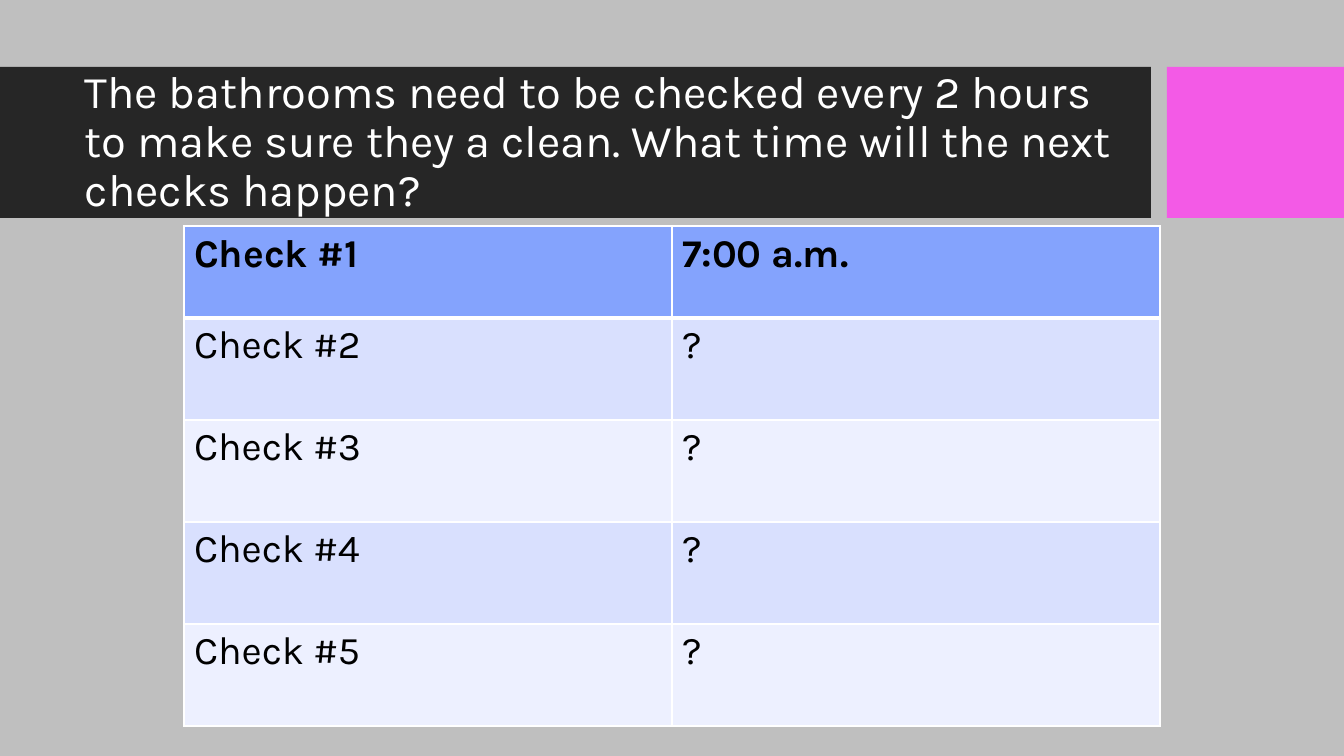
"""Build a slide with a table of bathroom check times."""
from lxml.etree import SubElement
from pptx import Presentation
from pptx.dml.color import RGBColor
from pptx.enum.shapes import MSO_SHAPE
from pptx.enum.text import MSO_ANCHOR
from pptx.oxml.ns import qn
from pptx.util import Emu, Pt


def px(num):
    return Emu(round(num * 914400 / 100.8))


def paint(fill, color):
    fill.solid()
    fill.fore_color.rgb = RGBColor.from_string(color)


deck = Presentation()
deck.slide_width, deck.slide_height = px(1344), px(756)
slide = deck.slides.add_slide(deck.slide_layouts[6])
paint(slide.background.fill, "BFBFBF")

for left, width, color in [(0, 1151, "262626"), (1167, 177, "F35AE6")]:
    bar = slide.shapes.add_shape(MSO_SHAPE.RECTANGLE, px(left), px(67), px(width), px(151))
    bar.shadow.inherit = False
    paint(bar.fill, color)
    bar.line.fill.background()

title = slide.shapes.add_textbox(px(75), px(83), px(1059), px(119))
frame = title.text_frame
frame.word_wrap = True
frame.vertical_anchor = MSO_ANCHOR.MIDDLE
frame.text = "The bathrooms need to be checked every 2 hours to make sure they a clean. What time will the next checks happen?"
para = frame.paragraphs[0]
para.line_spacing = 0.9
font = para.runs[0].font
font.name, font.size = "Karla", Pt(32.4)
paint(font.fill, "FFFFFF")

times = ["7:00 a.m.", "?", "?", "?", "?"]
table = slide.shapes.add_table(len(times), 2, px(184), px(226), px(976), px(500)).table
for col in table.columns:
    col.width = px(488)

for row, time in enumerate(times):
    table.rows[row].height = px(102 if row else 92)
    color = ("EDF0FF" if row % 2 == 0 else "D9E0FE") if row else "84A3FD"
    for col, text in enumerate([f"Check #{row + 1}", time]):
        cell = table.cell(row, col)
        cell.text_frame.text = text
        font = cell.text_frame.paragraphs[0].runs[0].font
        font.name, font.size, font.bold = "Karla", Pt(28), row == 0
        paint(font.fill, "000000")
        props = cell._tc.get_or_add_tcPr()
        for side in ["lnL", "lnR", "lnT", "lnB"]:
            thick = (side, row) in [("lnB", 0), ("lnT", 1)]
            line = SubElement(props, qn("a:" + side), w=str(Pt(3 if thick else 1)))
            solid = SubElement(line, qn("a:solidFill"))
            SubElement(solid, qn("a:srgbClr"), val="FFFFFF")
        paint(cell.fill, color)

deck.save("out.pptx")
